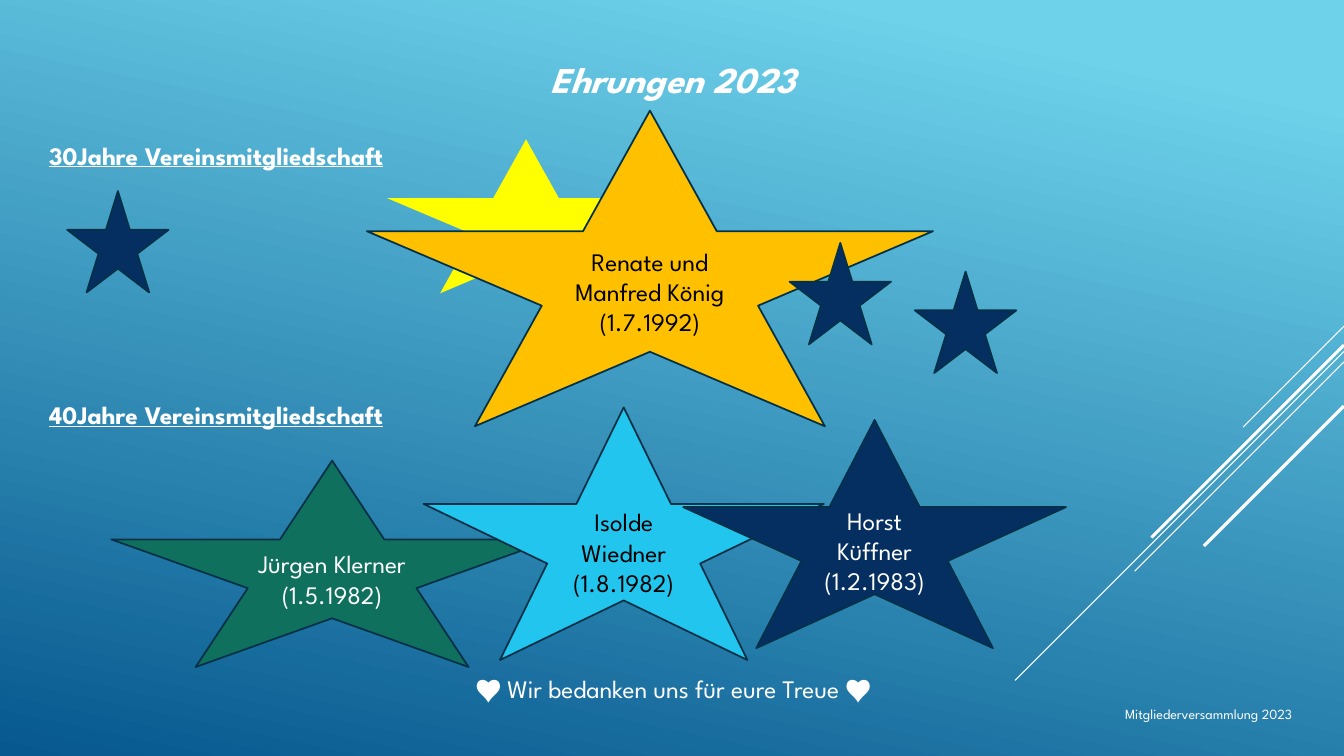
from pptx import Presentation
from pptx.dml.color import RGBColor
from pptx.enum.shapes import MSO_CONNECTOR as Connector, MSO_SHAPE as Shape
from pptx.enum.text import MSO_ANCHOR as Anchor, PP_ALIGN as Align
from pptx.oxml.ns import qn
from pptx.util import Pt
from lxml.etree import SubElement

FONT = "League Spartan"
WHITE = RGBColor(0xFF, 0xFF, 0xFF)
BLACK = RGBColor(0, 0, 0)
SKY = RGBColor(0x6E, 0xD2, 0xEB)
DEEP_BLUE = RGBColor(0x06, 0x58, 0x8E)
OUTLINE = RGBColor(0x04, 0x31, 0x48)
NAVY = RGBColor(0x05, 0x2F, 0x61)
GREEN = RGBColor(0x0F, 0x70, 0x5D)
CYAN = RGBColor(0x22, 0xC5, 0xED)
GOLD = RGBColor(0xFF, 0xC0, 0x00)
YELLOW = RGBColor(0xFF, 0xFF, 0x00)


def paint_background(slide):
    fill = slide.background.fill
    fill.gradient()
    fill.gradient_angle = 258
    for stop, position, color in zip(fill.gradient_stops, (0.1, 1), (SKY, DEEP_BLUE)):
        stop.position = position
        stop.color.rgb = color


def add_diagonal(slide, top, run, width):
    line = slide.shapes.add_connector(
        Connector.STRAIGHT, Pt(960), Pt(top), Pt(960 - run), Pt(top + run))
    line.line.color.rgb = WHITE
    line.line.width = Pt(width)
    SubElement(line._element.spPr, qn("a:effectLst"))


def write(text_frame, lines, size, color, align, bold=None, italic=None, underline=None):
    text_frame.word_wrap = True
    for index, line in enumerate(lines):
        paragraph = text_frame.add_paragraph() if index else text_frame.paragraphs[0]
        paragraph.text = line
        paragraph.alignment = align
        font = paragraph.font
        font.name, font.size = FONT, Pt(size)
        font.bold, font.italic, font.underline = bold, italic, underline
        font.color.rgb = color


def add_star(slide, left, top, width, height, color, lines=(), text_color=WHITE, outlined=True):
    star = slide.shapes.add_shape(
        Shape.STAR_5_POINT, Pt(left), Pt(top), Pt(width), Pt(height))
    star.shadow.inherit = False
    star.fill.solid()
    star.fill.fore_color.rgb = color
    if outlined:
        star.line.color.rgb = OUTLINE
        star.line.width = Pt(1.25)
    else:
        star.line.fill.background()
    star.text_frame.vertical_anchor = Anchor.MIDDLE
    write(star.text_frame, lines, 18, text_color, Align.CENTER)


def add_text(slide, left, top, width, height, text, size, align, **style):
    box = slide.shapes.add_textbox(Pt(left), Pt(top), Pt(width), Pt(height))
    write(box.text_frame, [text], size, WHITE, align, **style)


def main():
    presentation = Presentation()
    presentation.slide_width, presentation.slide_height = Pt(960), Pt(540)
    slide = presentation.slides.add_slide(presentation.slide_layouts[6])
    paint_background(slide)

    for top, run, width in ((233, 72, 0.75), (251, 235, 0.75), (258.5, 149.5, 0.75),
                            (246.5, 137.5, 2.25), (290, 100, 2.25)):
        add_diagonal(slide, top, run, width)

    add_star(slide, 276.5, 99.5, 198.5, 110, YELLOW, outlined=False)
    add_star(slide, 48, 136.5, 72.5, 72.5, NAVY)
    add_star(slide, 79.5, 329, 315.5, 147.5, GREEN, ["Jürgen Klerner", "(1.5.1982)"])
    add_star(slide, 302.5, 291, 286, 180.5, CYAN, ["Isolde Wiedner", "(1.8.1982)"], BLACK)
    add_star(slide, 488, 300, 273.5, 163, NAVY, ["Horst Küffner", "(1.2.1983)"])
    add_star(slide, 262, 79, 404.5, 225.5, GOLD,
             ["Renate und Manfred König (1.7.1992)"], BLACK)
    for left, top in ((564, 173.5), (653.5, 194)):
        add_star(slide, left, top, 72.5, 72.5, NAVY)

    add_text(slide, 240.5, 37, 481, 39, "Ehrungen 2023", 26, Align.CENTER,
             bold=True, italic=True)
    add_text(slide, 240.5, 477.5, 481, 29, "♥ Wir bedanken uns für eure Treue ♥",
             18, Align.CENTER)
    for years, top in ((30, 96.5), (40, 282)):
        add_text(slide, 28, top, 481, 29, f"{years}Jahre Vereinsmitgliedschaft",
                 18, Align.LEFT, bold=True, underline=True)
    add_text(slide, 336, 500.5, 594, 29, "Mitgliederversammlung 2023", 10, Align.RIGHT)

    presentation.save("out.pptx")


if __name__ == "__main__":
    main()
